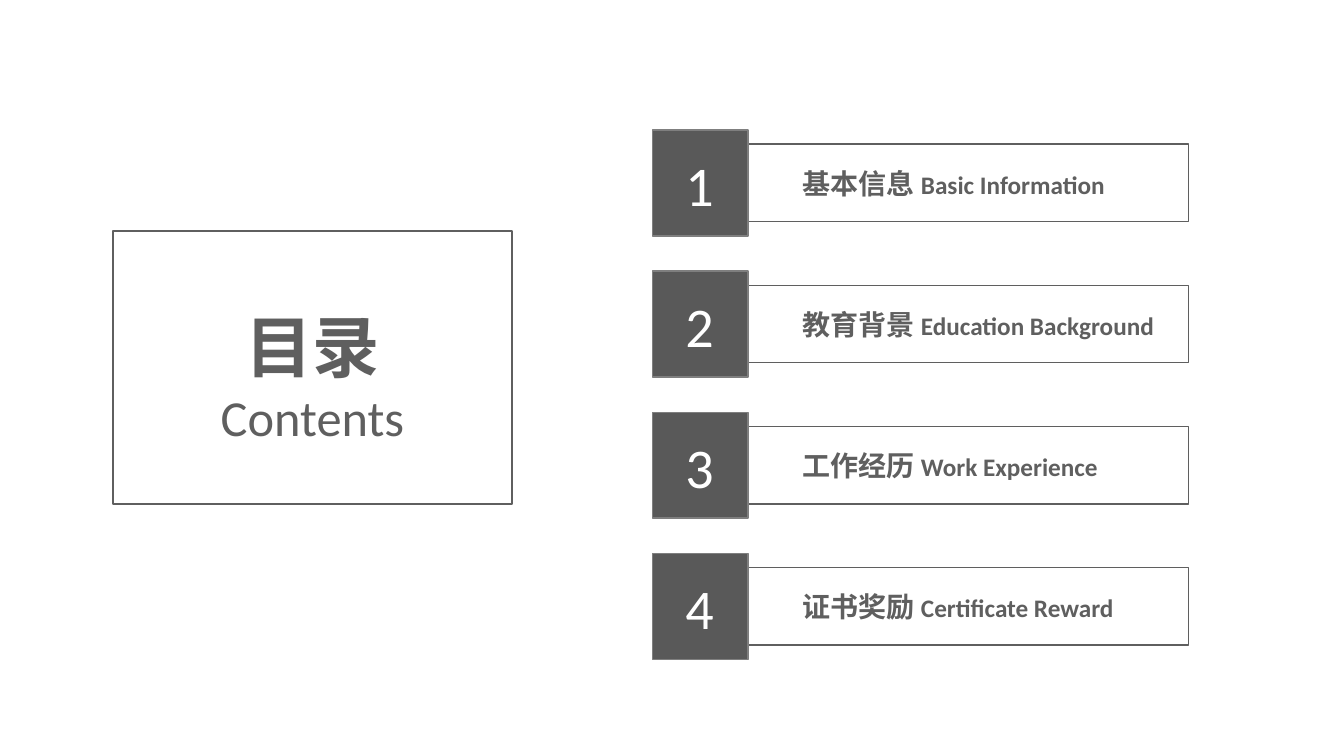
from dataclasses import dataclass

import pptx
import pptx.dml.color
import pptx.enum.shapes
import pptx.enum.text
import pptx.util
from lxml import etree

Inches = pptx.util.Inches
ALIGN = pptx.enum.text.PP_ALIGN


@dataclass(frozen=True)
class Theme:
    ink: str = "5F5F5F"
    tile: str = "595959"
    tile_edge: str = "7F7F7F"
    white: str = "FFFFFF"
    latin: str = "Calibri"
    chinese: str = "Noto Sans CJK SC"
    title: int = 48
    subtitle: int = 36
    number: int = 40
    topic: int = 20
    translation: int = 18
    edge: int = 1


THEME = Theme()
SECTIONS = [
    ("基本信息", "Basic Information"),
    ("教育背景", "Education Background"),
    ("工作经历", "Work Experience"),
    ("证书奖励", "Certificate Reward"),
]
ROW_PITCH = 1.4


def rgb(value):
    return pptx.dml.color.RGBColor.from_string(value)


def add_box(slide, left, top, width, height, edge, fill=None):
    box = slide.shapes.add_shape(
        pptx.enum.shapes.MSO_SHAPE.RECTANGLE,
        Inches(left), Inches(top), Inches(width), Inches(height))
    box.shadow.inherit = False
    box.line.color.rgb = rgb(edge)
    box.line.width = pptx.util.Pt(THEME.edge)
    if fill:
        box.fill.solid()
        box.fill.fore_color.rgb = rgb(fill)
    else:
        box.fill.background()


def add_run(paragraph, words, face, size, color=THEME.ink, bold=False):
    run = paragraph.add_run()
    run.text = words
    style = {"name": face, "size": pptx.util.Pt(size), "bold": bold}
    for attribute, value in style.items():
        setattr(run.font, attribute, value)
    run.font.color.rgb = rgb(color)
    if face == THEME.chinese:
        east_asian = etree.SubElement(run.font._element, pptx.oxml.ns.qn("a:ea"))
        east_asian.set("typeface", face)


def add_text(slide, left, top, width, height, paragraphs, align=ALIGN.LEFT):
    """Each paragraph is a list of add_run argument tuples."""
    frame = slide.shapes.add_textbox(
        Inches(left), Inches(top), Inches(width), Inches(height)).text_frame
    frame.word_wrap = True
    for index, runs in enumerate(paragraphs):
        paragraph = frame.add_paragraph() if index else frame.paragraphs[0]
        paragraph.alignment = align
        for run in runs:
            add_run(paragraph, *run)


def add_title_panel(slide, left, top, width, height):
    add_text(slide, left, top + 0.69, width, 1.51, [
        [("目录", THEME.chinese, THEME.title, THEME.ink, True)],
        [("Contents", THEME.latin, THEME.subtitle)],
    ], ALIGN.CENTER)
    add_box(slide, left, top, width, height, THEME.ink)


def add_section_row(slide, left, top, width, height, number, topic, translation):
    frame_left, frame_top = 0.34, 0.14
    add_text(slide, left + 1.39, top + 0.31, 3.93, 0.44, [[
        (topic + " ", THEME.chinese, THEME.topic, THEME.ink, True),
        (translation, THEME.latin, THEME.translation, THEME.ink, True),
    ]])
    add_box(slide, left + frame_left, top + frame_top,
            width - frame_left, height - 2 * frame_top, THEME.ink)
    add_box(slide, left, top, 0.95, height, THEME.tile_edge, THEME.tile)
    add_text(slide, left + 0.23, top + 0.15, 0.52, 0.77, [
        [(str(number), THEME.latin, THEME.number, THEME.white)],
    ])


def add_contents_slide(deck):
    slide = deck.slides.add_slide(deck.slide_layouts[6])
    add_title_panel(slide, 1.12, 2.29, 3.96, 2.71)
    for index, (topic, translation) in enumerate(SECTIONS):
        add_section_row(slide, 6.47, 1.29 + index * ROW_PITCH, 5.32, 1.05,
                        index + 1, topic, translation)


def main():
    deck = pptx.Presentation()
    deck.slide_width = Inches(13.33)
    deck.slide_height = Inches(7.5)
    add_contents_slide(deck)
    deck.save("out.pptx")


if __name__ == "__main__":
    main()
